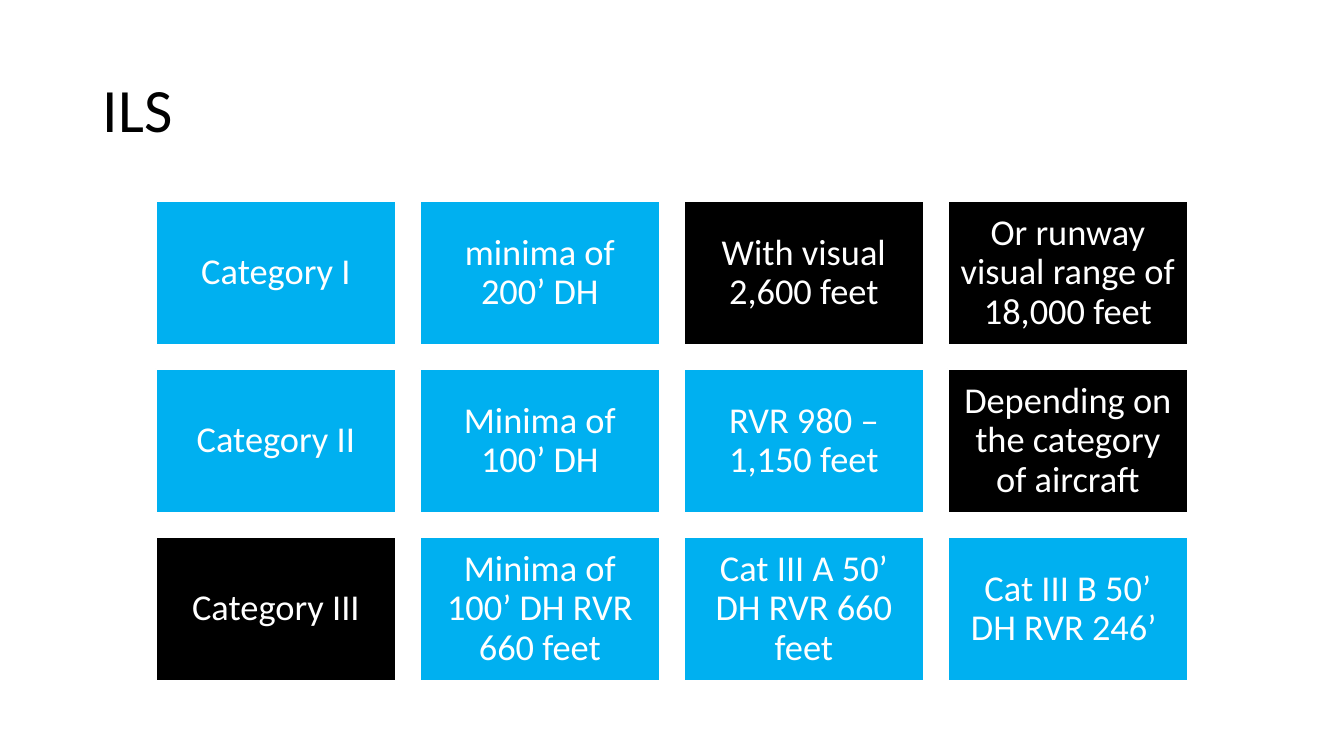
from pptx import Presentation, util as u
from pptx.dml.color import RGBColor
from pptx.enum import shapes, text

SCALE = 12700 * 72 / 100.8
BLUE, BLACK, WHITE = "00B0F0", "000000", "FFFFFF"
ROWS = [
    [("Category I", BLUE), ("minima of 200’ DH", BLUE),
     ("With visual 2,600 feet", BLACK),
     ("Or runway visual range of 18,000 feet", BLACK)],
    [("Category II", BLUE), ("Minima of 100’ DH", BLUE),
     ("RVR 980 – 1,150 feet", BLUE),
     ("Depending on the category of aircraft", BLACK)],
    [("Category III", BLACK), ("Minima of 100’ DH RVR 660 feet", BLUE),
     ("Cat III A 50’ DH RVR 660 feet", BLUE),
     ("Cat III B 50’ DH RVR 246’ ", BLUE)],
]


def px(n):
    return u.Emu(round(n * SCALE))


def color(code):
    return RGBColor.from_string(code)


def write(frame, words, size=26, ink=WHITE, align="CENTER", inset=11, font="Calibri"):
    frame.word_wrap = True
    frame.vertical_anchor = text.MSO_ANCHOR.MIDDLE
    frame.margin_left = frame.margin_right = px(inset)
    frame.margin_top = frame.margin_bottom = px(inset)
    para = frame.paragraphs[0]
    para.alignment = text.PP_ALIGN[align]
    para.line_spacing = 0.9
    run = para.add_run()
    run.text = words
    run.font.name = font
    run.font.size = u.Pt(size)
    run.font.color.rgb = color(ink)


class Deck:
    """Hold the style and the current slide, and draw its elements."""

    def __init__(self, wide, high):
        self.file = Presentation()
        self.file.slide_width, self.file.slide_height = px(wide), px(high)
        self.slide = self.file.slides.add_slide(self.file.slide_layouts[6])
        self.edge, self.weight = WHITE, u.Pt(1.5)

    def title(self, words, *place):
        box = self.slide.shapes.add_textbox(*map(px, place))
        write(box.text_frame, words, size=44, ink=BLACK, align="LEFT", inset=10)

    def card(self, words, fill, *place):
        box = self.slide.shapes.add_shape(
            shapes.MSO_SHAPE.RECTANGLE, *map(px, place))
        box.shadow.inherit = False
        box.fill.solid()
        box.fill.fore_color.rgb = color(fill)
        box.line.color.rgb = color(self.edge)
        box.line.width = self.weight
        write(box.text_frame, words)


def main():
    deck = Deck(1344, 756)
    deck.title("ILS", 93, 40, 1159, 146)
    for r, row in enumerate(ROWS):
        for c, (words, fill) in enumerate(row):
            deck.card(words, fill, 156 + 264 * c, 201 + 168 * r, 240, 144)
    deck.file.save("out.pptx")


if __name__ == "__main__":
    main()
